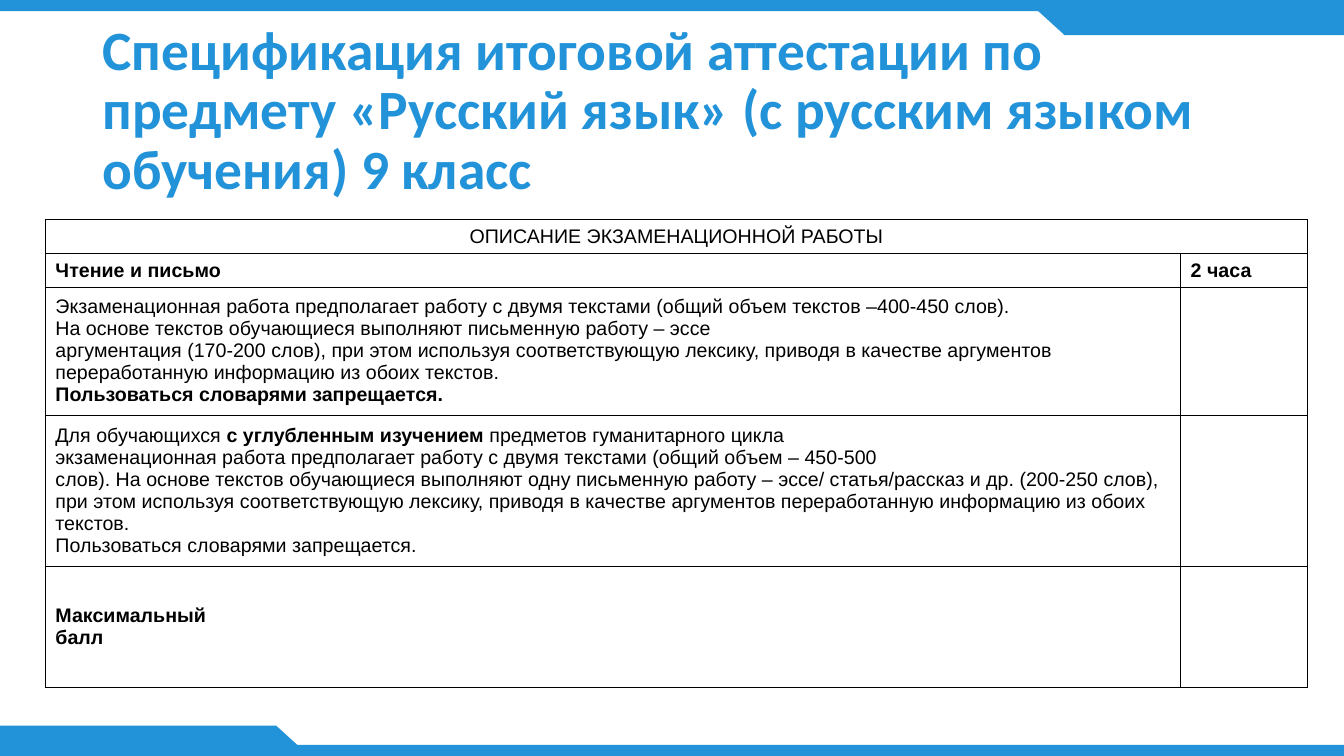
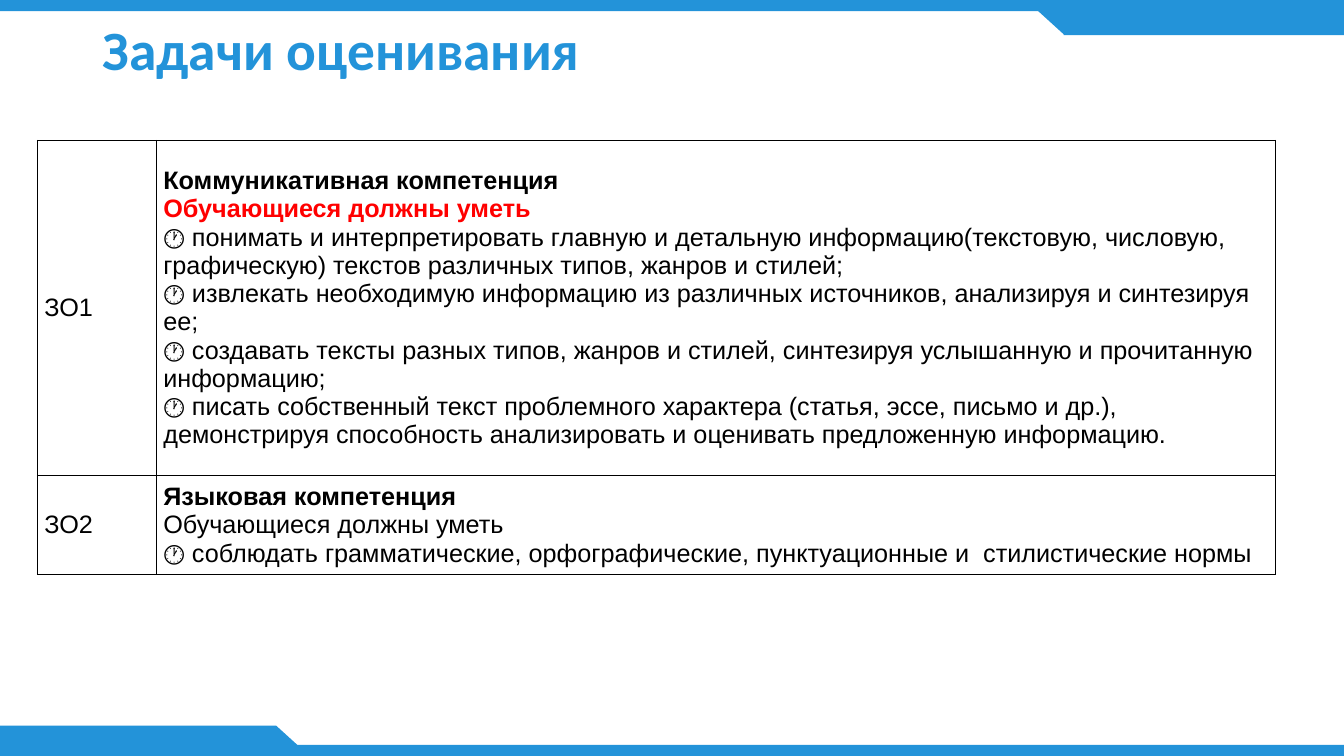
from pptx import Presentation
from pptx.dml.color import RGBColor
from pptx.enum.shapes import MSO_SHAPE
from pptx.enum.text import MSO_ANCHOR, PP_ALIGN
from pptx.oxml import parse_xml
from pptx.oxml.ns import nsdecls
from pptx.util import Inches, Pt

BLUE, BLACK, RED = "2393D9", "000000", "FF0000"
TITLE_FONT, BODY_FONT = "Calibri", "Arial"


def rgb(value):
    return RGBColor.from_string(value)


def bold(text, color=BLACK):
    return text, True, color


def plain(text):
    return text, False, BLACK


class Deck:
    """Holds the shared style and the current slide."""

    def __init__(self):
        self.prs = Presentation()
        self.prs.slide_width = Inches(13.33)
        self.prs.slide_height = Inches(7.5)
        self.s = None

    def slide(self, title):
        self.s = self.prs.slides.add_slide(self.prs.slide_layouts[6])
        self.bands()
        self.title(title)

    def shape(self, kind, left, top, width, height, rotation=0):
        sp = self.s.shapes.add_shape(kind, Inches(left), Inches(top),
                                     Inches(width), Inches(height))
        sp.shadow.inherit = False
        sp.fill.solid()
        sp.fill.fore_color.rgb = rgb(BLUE)
        sp.line.fill.background()
        sp.rotation = rotation

    def bands(self):
        # Thin strips along both edges
        for top in (0, 7.39):
            self.shape(MSO_SHAPE.RECTANGLE, 0, top, 13.33, 0.11)
        # Corner tabs with a slanted end
        for left, top, slant_left, slant_top, rotation in (
                (10.55, 0.05, 10.22, 0.04, 0), (-0.04, 7.2, 2.41, 7.2, 180)):
            self.shape(MSO_SHAPE.RECTANGLE, left, top, 2.78, 0.3)
            self.shape(MSO_SHAPE.FLOWCHART_MERGE, slant_left, slant_top,
                       0.66, 0.3, rotation)

    def style(self, r, size, font, color, is_bold):
        r.font.size = Pt(size)
        r.font.name = font
        r.font.bold = is_bold
        r.font.color.rgb = rgb(color)

    def title(self, text):
        box = self.s.shapes.add_textbox(Inches(0.92), Inches(0.17),
                                        Inches(11.5), Inches(1.91))
        tf = box.text_frame
        tf.word_wrap = True
        tf.vertical_anchor = MSO_ANCHOR.TOP
        p = tf.paragraphs[0]
        p.text = text
        p.line_spacing = 0.9
        self.style(p.runs[0], 39.6, TITLE_FONT, BLUE, True)

    def borders(self, cell):
        tc_pr = cell._tc.get_or_add_tcPr()
        for side in "LRTB":
            tc_pr.append(parse_xml(
                f'<a:ln{side} w="6350" {nsdecls("a")}><a:solidFill>'
                f'<a:srgbClr val="{BLACK}"/></a:solidFill></a:ln{side}>'))

    def cell(self, cell, lines, size, margins):
        self.borders(cell)
        cell.fill.background()
        cell.vertical_anchor = MSO_ANCHOR.MIDDLE
        cell.margin_left = cell.margin_right = Inches(margins[0])
        cell.margin_top = cell.margin_bottom = Inches(margins[1])
        for i, line in enumerate(lines):
            tf = cell.text_frame
            p = tf.add_paragraph() if i else tf.paragraphs[0]
            for text, is_bold, color in line:
                r = p.add_run()
                r.text = text
                self.style(r, size, BODY_FONT, color, is_bold)

    def table(self, left, top, widths, heights, rows, size, margins=(0.1, 0.05)):
        """Each cell is a list of lines, each line a list of runs."""
        table = self.s.shapes.add_table(
            len(heights), len(widths), Inches(left), Inches(top),
            Inches(sum(widths)), Inches(sum(heights))).table
        table.first_row = table.horz_banding = False
        for column, width in zip(table.columns, widths):
            column.width = Inches(width)
        for row, height, contents in zip(table.rows, heights, rows):
            row.height = Inches(height)
            for cell, lines in zip(row.cells, contents):
                self.cell(cell, lines, size, margins)
        return table


def specification(deck):
    deck.slide("Спецификация итоговой аттестации по предмету «Русский язык» "
               "(с русским языком обучения) 9 класс")
    reading = [
        [plain("Экзаменационная работа предполагает работу с двумя текстами "
               "(общий объем текстов –400-450 слов).")],
        [plain("На основе текстов обучающиеся выполняют письменную работу – эссе")],
        [plain("аргументация (170-200 слов), при этом используя соответствующую "
               "лексику, приводя в качестве аргументов переработанную "
               "информацию из обоих текстов.")],
        [bold("Пользоваться словарями запрещается.")],
    ]
    advanced = [
        [plain("Для обучающихся "), bold("с углубленным изучением "),
         plain("предметов гуманитарного цикла")],
        [plain("экзаменационная работа предполагает работу с двумя текстами "
               "(общий объем – 450-500")],
        [plain("слов). На основе текстов обучающиеся выполняют одну письменную "
               "работу – эссе/ статья/рассказ и др. (200-250 слов), при этом "
               "используя соответствующую лексику, приводя в качестве "
               "аргументов переработанную информацию из обоих текстов.")],
        [plain("Пользоваться словарями запрещается.")],
    ]
    rows = [
        ([[plain("ОПИСАНИЕ ЭКЗАМЕНАЦИОННОЙ РАБОТЫ")]], []),
        ([[bold("Чтение и письмо")]], [[bold("2 часа")]]),
        (reading, []),
        (advanced, []),
        ([[bold("Максимальный")], [bold("балл")]], []),
    ]
    table = deck.table(0.45, 2.18, (11.26, 1.26), (0.29, 0.29, 1.2, 1.29, 1.2),
                       rows, size=14)
    # Heading row across both columns
    heading = table.cell(0, 0)
    heading.merge(table.cell(0, 1))
    heading.text_frame.paragraphs[0].alignment = PP_ALIGN.CENTER


def objectives(deck):
    deck.slide("Задачи оценивания")
    communication = [
        [bold("Коммуникативная компетенция")],
        [bold("Обучающиеся должны уметь", RED)],
        [plain("🕐 понимать и интерпретировать главную и детальную "
               "информацию(текстовую, числовую, графическую) текстов различных "
               "типов, жанров и стилей;")],
        [plain("🕐 извлекать необходимую информацию из различных источников, "
               "анализируя и синтезируя ее;")],
        [plain("🕐 создавать тексты разных типов, жанров и стилей, синтезируя "
               "услышанную и прочитанную информацию;")],
        [plain("🕐 писать собственный текст проблемного характера (статья, "
               "эссе, письмо и др.), демонстрируя способность анализировать и "
               "оценивать предложенную информацию.")],
    ]
    language = [
        [bold("Языковая компетенция")],
        [plain("Обучающиеся должны уметь")],
        [plain("🕐 соблюдать грамматические, орфографические, пунктуационные "
               "и  стилистические нормы")],
    ]
    rows = [([[plain("ЗО1")]], communication), ([[plain("ЗО2")]], language)]
    deck.table(0.37, 1.39, (1.18, 11.1), (3.33, 0.84), rows, size=18,
               margins=(0.07, 0.04))


def main():
    deck = Deck()
    specification(deck)
    objectives(deck)
    deck.prs.save("out.pptx")


if __name__ == "__main__":
    main()
